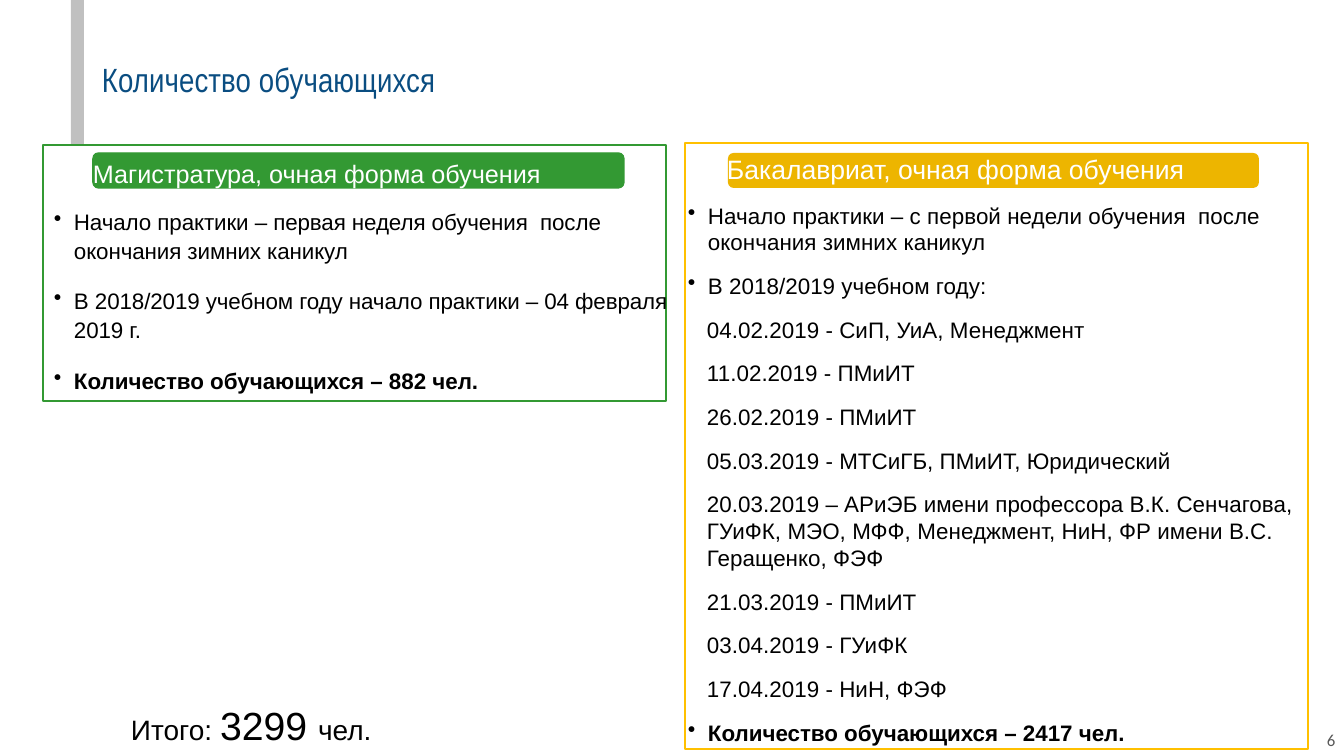
from dataclasses import dataclass

from lxml import etree
from pptx import Presentation
from pptx import util as u
from pptx.dml.color import RGBColor
from pptx.enum import shapes, text
from pptx.oxml import ns


@dataclass(frozen=True)
class Theme:
    title: str = "0A4D81"
    ink: str = "000000"
    white: str = "FFFFFF"
    grey: str = "C0C0C0"
    number: str = "585858"
    green: str = "339933"
    yellow: str = "FFC000"
    amber: str = "EDB500"
    title_size: int = 24
    body_size: int = 16
    total_size: int = 20
    total_big: int = 28
    number_size: int = 12


THEME = Theme()

MASTER_POINTS = [
    "Начало практики – первая неделя обучения  после окончания зимних каникул",
    "В 2018/2019 учебном году начало практики – 04 февраля 2019 г.",
]
BACHELOR_POINTS = [
    "Начало практики – с первой недели обучения  после окончания зимних каникул",
    "В 2018/2019 учебном году:",
]
BACHELOR_DATES = [
    "04.02.2019 - СиП, УиА, Менеджмент",
    "11.02.2019 - ПМиИТ",
    "26.02.2019 - ПМиИТ",
    "05.03.2019 - МТСиГБ, ПМиИТ, Юридический",
    "20.03.2019 – АРиЭБ имени профессора В.К. Сенчагова, ГУиФК, МЭО, МФФ, "
    "Менеджмент, НиН, ФР имени В.С. Геращенко, ФЭФ",
    "21.03.2019 - ПМиИТ",
    "03.04.2019 - ГУиФК",
    "17.04.2019 - НиН, ФЭФ",
]


def px(length):
    return u.Emu(round(length * 914400 / 100.8))


def place(*lengths):
    return [px(length) for length in lengths]


def add_block(page, kind, area, fill=None, line=None):
    block = page.shapes.add_shape(kind, *place(*area))
    block.shadow.inherit = False
    if fill:
        block.fill.solid()
        block.fill.fore_color.rgb = RGBColor.from_string(fill)
    else:
        block.fill.background()
    if line:
        block.line.color.rgb = RGBColor.from_string(line)
        block.line.width = u.Pt(1)
    else:
        block.line.fill.background()
    return block


def set_frame(frame, top=1, wrap=True):
    frame.margin_left = frame.margin_right = frame.margin_bottom = 0
    frame.margin_top = px(top)
    frame.word_wrap = wrap
    frame.auto_size = text.MSO_AUTO_SIZE.NONE
    frame.vertical_anchor = text.MSO_ANCHOR.TOP


def set_font(para, size, color, name="Arial", bold=False, tracking=0):
    para.font.size = u.Pt(size)
    para.font.name = name
    para.font.bold = bold
    para.font.color.rgb = RGBColor.from_string(color)
    # Letter spacing, in hundredths of a point
    para._p.pPr.find(ns.qn("a:defRPr")).set("spc", str(tracking))


def set_indent(para, left, bullet=False):
    props = para._p.get_or_add_pPr()
    props.set("marL", str(px(left)))
    props.set("indent", str(px(-20 if bullet else 0)))
    if bullet:
        etree.SubElement(props, ns.qn("a:buChar")).set("char", "•")


def add_label(page, area, words, size, color, name="Arial"):
    box = page.shapes.add_textbox(*place(*area))
    set_frame(box.text_frame, wrap=False)
    para = box.text_frame.paragraphs[0]
    para.space_before = u.Pt(1)
    for word in words:
        para.add_run().text = word
    set_font(para, size, color, name)
    return para


def add_list(page, area, heading, heading_size, items, gaps, tracking, leading=None):
    """Items are (words, left indent, bullet, bold)."""
    box = page.shapes.add_textbox(*place(*area))
    set_frame(box.text_frame, top=20)
    para = box.text_frame.paragraphs[0]
    para.text = heading
    para.space_before = u.Pt(14.3)
    set_indent(para, 40)
    set_font(para, heading_size, THEME.white)
    for index, (words, left, bullet, bold) in enumerate(items):
        para = box.text_frame.add_paragraph()
        para.text = words
        para.space_before = u.Pt(gaps[min(index, len(gaps) - 1)])
        if leading:
            para.line_spacing = u.Pt(leading)
        set_indent(para, left, bullet)
        set_font(para, THEME.body_size, THEME.ink, bold=bold,
                 tracking=0 if bold else tracking)


def add_panel(page, frame, pill, line, fill, pill_line=None):
    add_block(page, shapes.MSO_SHAPE.RECTANGLE, frame, line=line)
    bar = add_block(page, shapes.MSO_SHAPE.ROUNDED_RECTANGLE, pill, fill, pill_line)
    bar.adjustments[0] = 0.16


def add_title(page, words):
    title = page.shapes.title
    title.left, title.top, title.width, title.height = place(102, 58, 338, 44)
    title.text_frame.text = words
    set_frame(title.text_frame, wrap=False)
    para = title.text_frame.paragraphs[0]
    para.alignment = text.PP_ALIGN.LEFT
    para.space_before = u.Pt(1)
    set_font(para, THEME.title_size, THEME.title, "Arial Narrow", tracking=10)


def main():
    deck = Presentation()
    deck.slide_width, deck.slide_height = place(1344, 756)
    page = deck.slides.add_slide(deck.slide_layouts[5])

    # Title and side bar
    add_block(page, shapes.MSO_SHAPE.RECTANGLE, (71, 0, 13, 144), THEME.grey)
    add_title(page, "Количество обучающихся")

    # Bachelor panel
    add_panel(page, (685, 143, 623, 606), (728, 153, 531, 35), THEME.yellow, THEME.amber)
    items = [(words, 21, True, False) for words in BACHELOR_POINTS]
    items += [(words, 20, False, False) for words in BACHELOR_DATES]
    items.append(("Количество обучающихся – 2417 чел.", 21, True, True))
    add_list(page, (687, 133, 657, 619), "Бакалавриат, очная форма обучения", 19,
             items, [12], tracking=5)

    # Master panel
    add_panel(page, (43, 145, 623, 256), (93, 153, 531, 35), THEME.green, THEME.green,
              THEME.green)
    items = [(words, 21, True, False) for words in MASTER_POINTS]
    items.append(("Количество обучающихся – 882 чел.", 21, True, True))
    add_list(page, (53, 138, 624, 259), "Магистратура, очная форма обучения", 18,
             items, [12.2, 15.1], tracking=-5, leading=20.9)

    # Total and page number
    total = add_label(page, (131, 700, 245, 49), ["Итого: ", "3299 ", "чел."],
                      THEME.total_size, THEME.ink)
    total.runs[1].font.size = u.Pt(THEME.total_big)
    add_label(page, (1327, 729, 11, 23), ["6"], THEME.number_size, THEME.number, "Calibri")

    deck.save("out.pptx")


if __name__ == "__main__":
    main()
